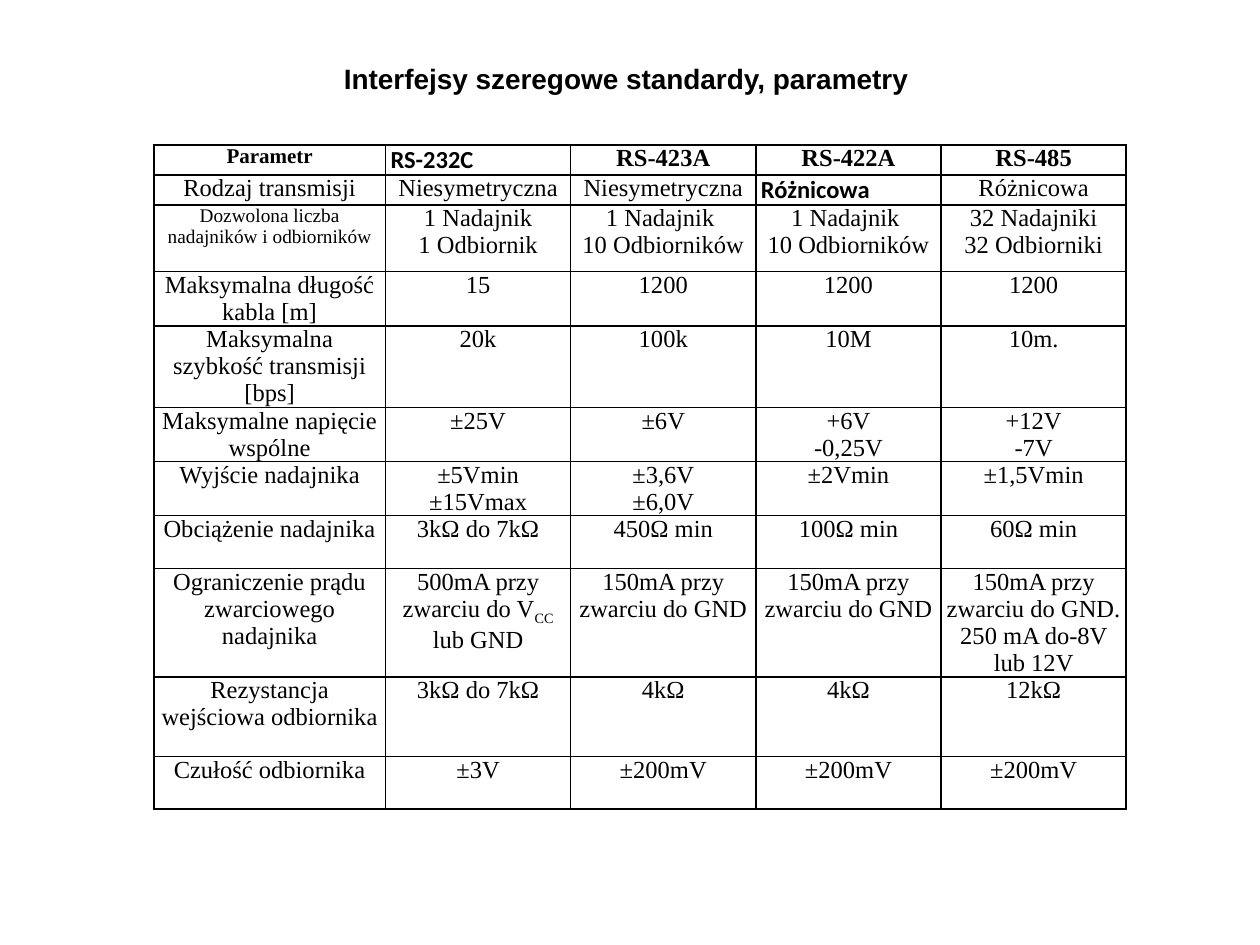
"""Build a slide with a table comparing serial interface standards."""
from lxml.etree import SubElement
from pptx import Presentation
from pptx.dml.color import RGBColor
from pptx.enum.text import MSO_ANCHOR, PP_ALIGN
from pptx.oxml.ns import qn
from pptx.util import Inches, Pt

BLACK = "000000"
SERIF = "Times New Roman"


def add_span(para, text, font=SERIF, size=14, bold=False):
    span = para.add_run()
    span.text = text
    span.font.name = font
    span.font.size = Pt(size)
    span.font.bold = bold
    span.font.color.rgb = RGBColor.from_string(BLACK)
    return span


def add_border(cell, side, width):
    line = SubElement(cell._tc.get_or_add_tcPr(), qn(f"a:ln{side}"), w=str(Pt(width)))
    fill = SubElement(line, qn("a:solidFill"))
    SubElement(fill, qn("a:srgbClr"), val=BLACK)


rows = [
    ["Parametr", "RS-232C", "RS-423A", "RS-422A", "RS-485"],
    ["Rodzaj transmisji", "Niesymetryczna", "Niesymetryczna", "Różnicowa", "Różnicowa"],
    ["Dozwolona liczba nadajników i odbiorników", "1 Nadajnik\n1 Odbiornik",
     "1 Nadajnik \n10 Odbiorników", "1 Nadajnik \n10 Odbiorników",
     "32 Nadajniki\n32 Odbiorniki"],
    ["Maksymalna długość kabla [m]", "15", "1200", "1200", "1200"],
    ["Maksymalna szybkość transmisji [bps]", "20k", "100k", "10M", "10m."],
    ["Maksymalne napięcie wspólne", "±25V", "±6V", "+6V\n-0,25V", "+12V\n-7V"],
    ["Wyjście nadajnika", "±5Vmin\n±15Vmax", "±3,6V\n±6,0V", "±2Vmin", "±1,5Vmin"],
    ["Obciążenie nadajnika", "3kΩ do 7kΩ", "450Ω min", "100Ω min", "60Ω min"],
    ["Ograniczenie prądu zwarciowego nadajnika", "500mA przy zwarciu do V_CC _lub GND",
     "150mA przy zwarciu do GND", "150mA przy zwarciu do GND",
     "150mA przy zwarciu do GND. 250 mA do-8V lub 12V"],
    ["Rezystancja wejściowa odbiornika", "3kΩ do 7kΩ", "4kΩ", "4kΩ", "12kΩ"],
    ["Czułość odbiornika", "±3V", "±200mV", "±200mV", "±200mV"],
]
row_heights = [0.24, 0.21, 0.53, 0.42, 0.63, 0.42, 0.42, 0.42, 0.84, 0.63, 0.42]
column_widths = [1.84] + [1.47] * 4
last_row, last_column = len(rows) - 1, len(column_widths) - 1
sizes = {(0, 0): 12, (2, 0): 11}
calibri_cells = {(0, 1), (1, 3)}

deck = Presentation()
deck.slide_width, deck.slide_height = Inches(10), Inches(7.5)
page = deck.slides.add_slide(deck.slide_layouts[6])

table = page.shapes.add_table(
    len(rows), len(column_widths), Inches(1.22), Inches(1.15),
    Inches(sum(column_widths)), Inches(sum(row_heights)),
).table
table.first_row = False
table.horz_banding = False
for column, width in zip(table.columns, column_widths):
    column.width = Inches(width)

for r, texts in enumerate(rows):
    table.rows[r].height = Inches(row_heights[r])
    for c, text in enumerate(texts):
        cell = table.cell(r, c)
        cell.margin_left = cell.margin_right = Inches(0.04)
        cell.margin_top = cell.margin_bottom = 0
        heavy_sides = {"L": c == 0, "R": c == last_column,
                       "T": r <= 1, "B": r in (0, last_row)}
        for side, heavy in heavy_sides.items():
            add_border(cell, side, 1.5 if heavy else 1)
        cell.fill.background()

        special = (r, c) in calibri_cells
        for i, line in enumerate(text.split("\n")):
            para = cell.text_frame.add_paragraph() if i else cell.text_frame.paragraphs[0]
            para.alignment = PP_ALIGN.LEFT if special else PP_ALIGN.CENTER
            for j, part in enumerate(line.split("_")):
                span = add_span(para, part, "Calibri" if special else SERIF,
                                sizes.get((r, c), 14), r == 0 or special)
                if j == 1:
                    span.font._element.set("baseline", "-25000")

box = page.shapes.add_textbox(0, Inches(0.44), Inches(10), Inches(0.59))
frame = box.text_frame
frame.word_wrap = True
frame.vertical_anchor = MSO_ANCHOR.TOP
frame.margin_bottom = 0
para = frame.paragraphs[0]
para.alignment = PP_ALIGN.CENTER
add_span(para, "Interfejsy szeregowe standardy, parametry ", "Arial", 16, True)

deck.save("out.pptx")
